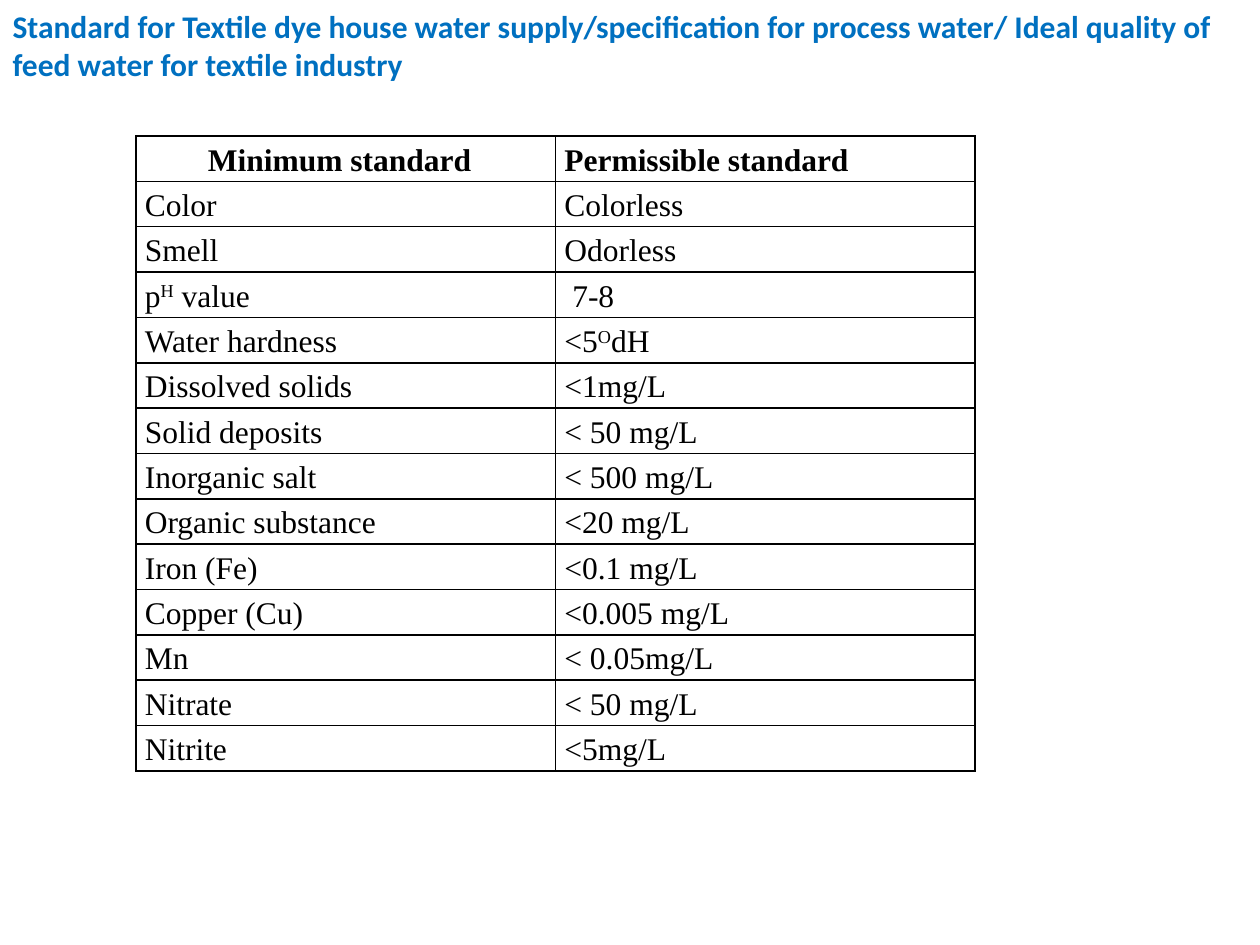
from pptx import Presentation
from pptx.dml.color import RGBColor
from pptx.enum.text import MSO_ANCHOR, MSO_AUTO_SIZE, PP_ALIGN
from pptx.oxml.ns import qn
from pptx.util import Inches, Pt
from lxml import etree

LEFT = PP_ALIGN.LEFT
MIDDLE = MSO_ANCHOR.MIDDLE
TOP = MSO_ANCHOR.TOP
NO_FIT = MSO_AUTO_SIZE.NONE
TITLE_ONLY = 5

COLORS = {"title": "0070C0", "text": "000000", "border": "000000"}
TITLE = (
    "Standard for Textile dye house water supply/specification for process "
    "water/ Ideal quality of feed water for textile industry"
)
STANDARDS = [
    ("Minimum standard", "Permissible standard"),
    ("Color", "Colorless"),
    ("Smell", "Odorless"),
    ("p^H^ value", " 7-8"),
    ("Water hardness", "<5^O^dH"),
    ("Dissolved solids", "<1mg/L"),
    ("Solid deposits", "< 50 mg/L"),
    ("Inorganic salt", "< 500 mg/L"),
    ("Organic substance", "<20 mg/L"),
    ("Iron (Fe)", "<0.1 mg/L"),
    ("Copper (Cu)", "<0.005 mg/L"),
    ("Mn", "< 0.05mg/L"),
    ("Nitrate", "< 50 mg/L"),
    ("Nitrite", "<5mg/L"),
]


class WaterPage:
    """Holds the style and the current slide; text between carets is raised."""

    def __init__(self, deck):
        self.page = deck.slides.add_slide(deck.slide_layouts[TITLE_ONLY])
        self.size = Pt(18)

    def style(self, para, font_name, color, bold):
        para.alignment = LEFT
        para.font.name = font_name
        para.font.size = self.size
        para.font.bold = bold
        para.font.color.rgb = RGBColor.from_string(COLORS[color])

    def title(self, text, left, top, width, height):
        box = self.page.shapes.title
        box.left, box.top = Inches(left), Inches(top)
        box.width, box.height = Inches(width), Inches(height)
        frame = box.text_frame
        frame.text = text
        frame.word_wrap = True
        frame.auto_size = NO_FIT
        frame.vertical_anchor = MIDDLE
        self.style(frame.paragraphs[0], "Calibri", "title", True)

    def borders(self, cell):
        properties = cell._tc.get_or_add_tcPr()
        for side in ("a:lnL", "a:lnR", "a:lnT", "a:lnB"):
            line = etree.SubElement(properties, qn(side), w=str(Pt(1)))
            fill = etree.SubElement(line, qn("a:solidFill"))
            etree.SubElement(fill, qn("a:srgbClr"), val=COLORS["border"])

    def cell(self, cell, text, bold):
        self.borders(cell)
        cell.fill.background()
        cell.margin_left = cell.margin_right = Inches(0.07)
        cell.margin_top = cell.margin_bottom = 0
        cell.vertical_anchor = TOP
        para = cell.text_frame.paragraphs[0]
        para.line_spacing = 1.2
        self.style(para, "Times New Roman", "text", bold)
        for index, part in enumerate(text.split("^")):
            span = para.add_run()
            span.text = part
            if index % 2:
                span.font._element.set("baseline", "30000")

    def table(self, rows, left, top, column_width, row_height):
        columns = len(rows[0])
        table = self.page.shapes.add_table(
            len(rows), columns, Inches(left), Inches(top),
            Inches(column_width * columns), Inches(row_height * len(rows)),
        ).table
        table.first_row = table.horz_banding = False
        for column in table.columns:
            column.width = Inches(column_width)
        for row_index, row in enumerate(rows):
            table.rows[row_index].height = Inches(row_height)
            for column_index, text in enumerate(row):
                self.cell(table.cell(row_index, column_index), text, row_index == 0)
        heading = table.cell(0, 0).text_frame.paragraphs[0]
        heading._p.get_or_add_pPr().set("indent", str(Inches(0.5)))


def main():
    deck = Presentation()
    deck.slide_width, deck.slide_height = Inches(10), Inches(7.5)
    page = WaterPage(deck)
    page.title(TITLE, 0, 0, 10, 0.71)
    page.table(STANDARDS, 1.08, 1.08, 3.33, 0.36)
    deck.save("out.pptx")


if __name__ == "__main__":
    main()
